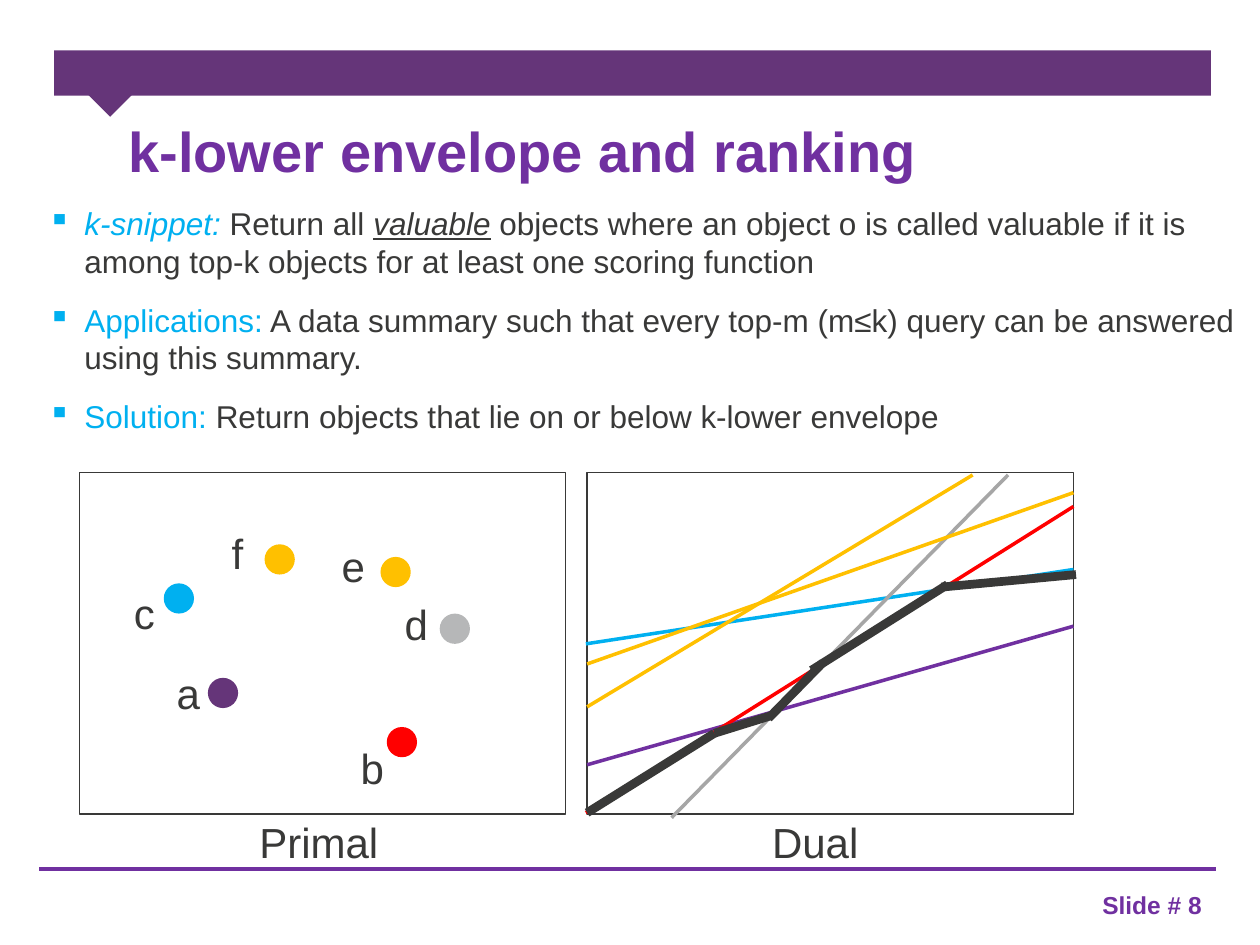
from lxml.etree import SubElement
from pptx import Presentation
from pptx.dml.color import RGBColor
from pptx.enum.shapes import MSO_CONNECTOR, MSO_SHAPE
from pptx.enum.text import MSO_ANCHOR, PP_ALIGN
from pptx.oxml.ns import qn
from pptx.util import Inches, Pt

WIDTH, HEIGHT = Inches(10), Inches(7.5)
COLUMNS, ROWS = 1000, 750
FONT = "Arial"
INK, VIOLET, PLUM = "393938", "7030A0", "653579"
BLUE, RED, AMBER, SILVER, GRAY = "00B0F0", "FF0000", "FFC000", "B6B7B8", "A6A6A6"

PANEL_TOP, PANEL_WIDTH, PANEL_HEIGHT = 375, 386, 271
PANELS = [("Primal", 63, 152), ("Dual", 466, 546)]
DOT_SIZE = 24
POINTS = [
    ("a", PLUM, (165, 538), (122, 525)),
    ("b", RED, (307, 577), (268, 584)),
    ("c", BLUE, (130, 463), (87, 461)),
    ("d", SILVER, (349, 487), (303, 470)),
    ("e", AMBER, (302, 442), (253, 424)),
    ("f", AMBER, (210, 432), (161, 414)),
]
LOWER_LINES = [
    (VIOLET, (852, 497), (466, 607)),
    (RED, (852, 402), (465, 645)),
    (BLUE, (852, 452), (465, 511)),
    (GRAY, (800, 377), (533, 649)),
]
ENVELOPE = [
    ((466, 645), (567, 582)),
    ((644, 532), (752, 464)),
    ((567, 582), (612, 568)),
    ((610, 570), (653, 526)),
    ((747, 466), (854, 456)),
]
UPPER_LINES = [
    (AMBER, (772, 377), (466, 561)),
    (AMBER, (852, 391), (466, 527)),
]
BULLETS = [
    [("k-snippet: ", BLUE, True, False), ("Return all ", INK, False, False),
     ("valuable", INK, True, True),
     (" objects where an object o is called valuable if it is among top-k "
      "objects for at least one scoring function", INK, False, False)],
    [("Applications:", BLUE, False, False),
     (" A data summary such that every top-m (m≤k) query can be answered "
      "using this summary.", INK, False, False)],
    [("Solution: ", BLUE, False, False),
     ("Return objects that lie on or below k-lower envelope", INK, False, False)],
]


def color(value):
    """Turn a hex string into a colour."""
    return RGBColor.from_string(value)


def across(column):
    """Return the horizontal length of a number of grid columns."""
    return round(WIDTH * column / COLUMNS)


def down(row):
    """Return the vertical length of a number of grid rows."""
    return round(HEIGHT * row / ROWS)


def area(left, top, width, height):
    """Return a grid area as slide lengths."""
    return across(left), down(top), across(width), down(height)


def style(font, size, value, bold=False):
    """Set the face, size, colour and weight of a font."""
    font.name, font.size, font.bold = FONT, Pt(size), bold
    font.color.rgb = color(value)


def add_figure(slide, kind, place, fill=None, line=None):
    """Add a preset shape with an optional fill and outline."""
    figure = slide.shapes.add_shape(kind, *area(*place))
    figure.shadow.inherit = False
    if fill:
        figure.fill.solid()
        figure.fill.fore_color.rgb = color(fill)
    else:
        figure.fill.background()
    if line:
        figure.line.color.rgb = color(line)
        figure.line.width = Pt(0.75)
    else:
        figure.line.fill.background()
    return figure


def add_line(slide, start, end, value, weight):
    """Add a straight line between two grid points."""
    line = slide.shapes.add_connector(
        MSO_CONNECTOR.STRAIGHT,
        across(start[0]), down(start[1]), across(end[0]), down(end[1]))
    line.line.color.rgb = color(value)
    line.line.width = Pt(weight)
    SubElement(line.element.spPr, qn("a:effectLst"))


def add_label(slide, text, place, size=24, value=INK, bold=False,
              align=PP_ALIGN.CENTER, anchor=MSO_ANCHOR.TOP):
    """Add a one-line text box."""
    frame = slide.shapes.add_textbox(*area(*place)).text_frame
    frame.word_wrap = True
    frame.vertical_anchor = anchor
    para = frame.paragraphs[0]
    para.text = text
    para.alignment = align
    style(para.font, size, value, bold)


def set_insets(frame):
    """Remove the left and top insets of a text frame."""
    frame.margin_left = frame.margin_top = 0
    frame.margin_right, frame.margin_bottom = Inches(0.1), Inches(0.05)


def add_title(slide, text):
    """Place and format the title placeholder."""
    title = slide.shapes.title
    title.left, title.top, title.width, title.height = area(102, 88, 898, 67)
    frame = title.text_frame
    set_insets(frame)
    frame.vertical_anchor = MSO_ANCHOR.MIDDLE
    para = frame.paragraphs[0]
    para.text = text
    para.alignment = PP_ALIGN.LEFT
    style(para.font, 32, VIOLET, True)


def add_bullets(slide):
    """Add the bulleted explanation."""
    frame = slide.shapes.add_textbox(*area(38, 162, 962, 177)).text_frame
    frame.word_wrap = True
    set_insets(frame)
    for index, spans in enumerate(BULLETS):
        para = frame.add_paragraph() if index else frame.paragraphs[0]
        properties = para._p.get_or_add_pPr()
        properties.set("marL", str(across(29)))
        properties.set("indent", str(-across(29)))
        SubElement(properties, qn("a:buChar"), char="▪")
        para.space_after = Pt(12)
        style(para.font, 18, INK)
        for text, value, italic, underline in spans:
            span = para.add_run()
            span.text = text
            style(span.font, 18, value)
            span.font.italic, span.font.underline = italic, underline


def add_banner(slide):
    """Add the top band with its pointer and the footer rule."""
    add_figure(slide, MSO_SHAPE.RECTANGLE, (43, 40, 918, 36), PLUM)
    pointer = add_figure(slide, MSO_SHAPE.RECTANGLE, (71, 55, 32, 31), PLUM)
    pointer.rotation = 45
    add_line(slide, (31, 690), (965, 690), VIOLET, 2.25)


def add_panels(slide):
    """Add the two plot frames with their captions."""
    for caption, left, caption_left in PANELS:
        add_figure(slide, MSO_SHAPE.RECTANGLE,
                   (left, PANEL_TOP, PANEL_WIDTH, PANEL_HEIGHT), line=INK)
        add_label(slide, caption, (caption_left, 643, 202, 50))


def add_points(slide):
    """Add the labelled points of the primal plot."""
    for name, value, dot, label in POINTS:
        add_figure(slide, MSO_SHAPE.OVAL, (*dot, DOT_SIZE, DOT_SIZE), value)
        add_label(slide, name, (*label, 55, 50))


def add_dual_lines(slide):
    """Add the lines and the lower envelope of the dual plot."""
    for value, start, end in LOWER_LINES:
        add_line(slide, start, end, value, 2)
    for start, end in ENVELOPE:
        add_line(slide, start, end, INK, 5)
    for value, start, end in UPPER_LINES:
        add_line(slide, start, end, value, 2)


def main():
    """Build and save the deck."""
    deck = Presentation()
    deck.slide_width, deck.slide_height = WIDTH, HEIGHT
    slide = deck.slides.add_slide(deck.slide_layouts[5])
    add_banner(slide)
    add_bullets(slide)
    add_title(slide, "k-lower envelope and ranking")
    add_label(slide, "Slide # 8", (865, 710, 131, 16), 14, VIOLET, True,
              PP_ALIGN.LEFT, MSO_ANCHOR.MIDDLE)
    add_panels(slide)
    add_points(slide)
    add_dual_lines(slide)
    deck.save("out.pptx")


if __name__ == "__main__":
    main()
